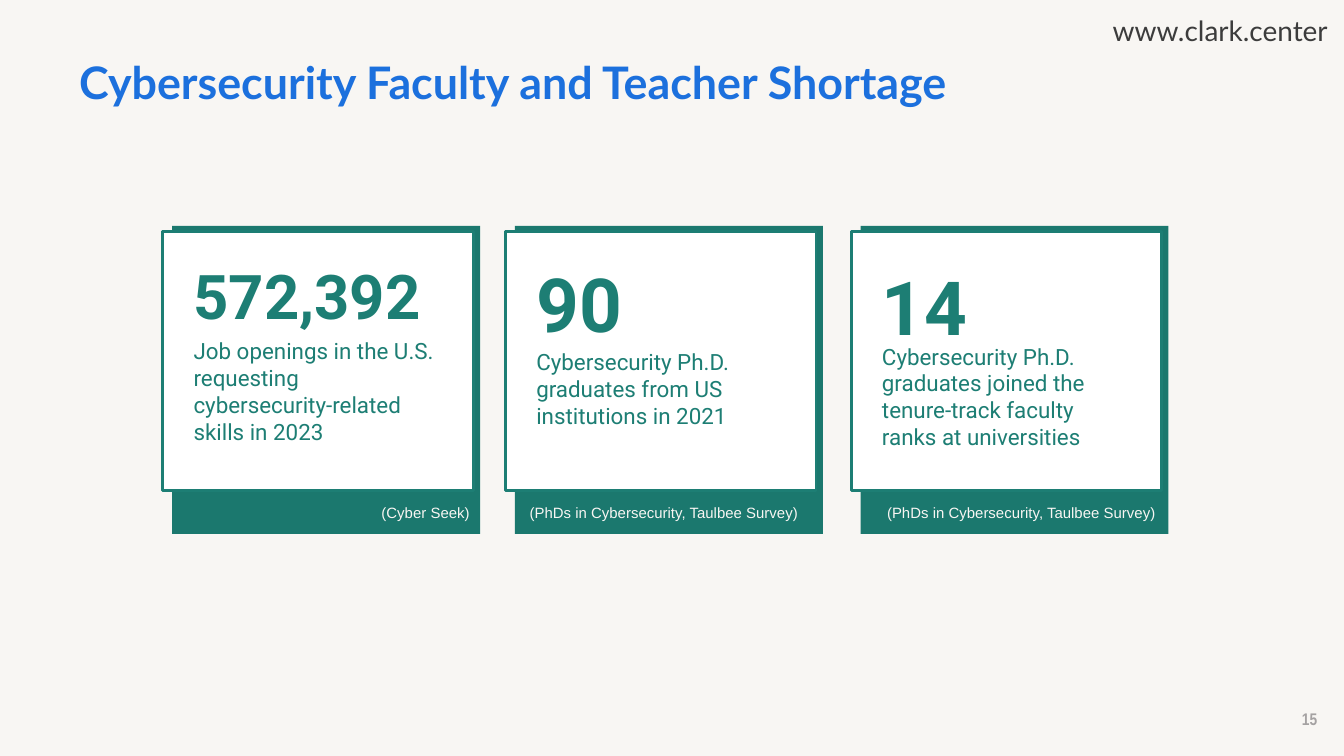
from dataclasses import dataclass

from pptx import Presentation
from pptx.dml.color import RGBColor
from pptx.enum.shapes import MSO_SHAPE as SHAPE
from pptx.enum.text import MSO_ANCHOR as ANCHOR, MSO_AUTO_SIZE as AUTO, PP_ALIGN as ALIGN
from pptx.util import Pt


@dataclass(frozen=True)
class Theme:
    paper: str = "F8F6F3"
    white: str = "FFFFFF"
    blue: str = "1C70DD"
    teal: str = "1D7E74"
    dark_teal: str = "1B786E"
    ink: str = "3C3C3C"
    gray: str = "A5A2A2"
    heading: str = "Lato"
    body: str = "Roboto"
    source: str = "Arial"
    number: str = "Arial Narrow"
    title_size: float = 24
    site_size: float = 15
    text_size: float = 12
    page_size: float = 9
    source_size: float = 8


class Deck:
    def __init__(self, theme, width, height):
        self.theme = theme
        self.prs = Presentation()
        self.prs.slide_width, self.prs.slide_height = Pt(width), Pt(height)

    def new_slide(self):
        self.slide = self.prs.slides.add_slide(self.prs.slide_layouts[5])
        fill = self.slide.background.fill
        fill.solid()
        fill.fore_color.rgb = RGBColor.from_string(self.theme.paper)

    def set_text(self, sp, text, font, size, color, bold=False, inset=(7.2, 7.2),
                 anchor=ANCHOR.TOP, **paragraph):
        """Fill a shape's text frame with one formatted paragraph."""
        tf = sp.text_frame
        dx, dy = inset
        frame = dict(word_wrap=True, auto_size=AUTO.NONE, vertical_anchor=anchor,
                     margin_left=Pt(dx), margin_right=Pt(dx),
                     margin_top=Pt(dy), margin_bottom=Pt(dy))
        p = tf.paragraphs[0]
        r = p.add_run()
        r.text = text
        r.font.color.rgb = RGBColor.from_string(color)
        run = dict(name=font, size=Pt(size), bold=bold)
        for target, values in ((tf, frame), (p, paragraph), (r.font, run)):
            for key, value in values.items():
                setattr(target, key, value)

    def title(self, box, text):
        sp = self.slide.shapes.title
        sp.left, sp.top, sp.width, sp.height = map(Pt, box)
        t = self.theme
        self.set_text(sp, text, t.heading, t.title_size, t.blue, True, (5, 3),
                      anchor=ANCHOR.MIDDLE, alignment=ALIGN.LEFT, line_spacing=0.9)

    def text(self, box, text, font, size, color, parent=None, **style):
        shapes = (parent or self.slide).shapes
        sp = shapes.add_textbox(*map(Pt, box))
        self.set_text(sp, text, font, size, color, **style)

    def rect(self, box, fill, line=None, parent=None):
        shapes = (parent or self.slide).shapes
        sp = shapes.add_shape(SHAPE.RECTANGLE, *map(Pt, box))
        sp.shadow.inherit = False
        sp.fill.solid()
        sp.fill.fore_color.rgb = RGBColor.from_string(fill)
        if line:
            sp.line.color.rgb = RGBColor.from_string(line)
            sp.line.width = Pt(1.5)
        else:
            sp.line.fill.background()

    def card(self, x, figure, size, figure_y, label, label_y):
        """A white panel over a teal square, with a figure and its label."""
        t = self.theme
        g = self.slide.shapes.add_group_shape()
        self.rect((x, 121, 165, 165), t.dark_teal, parent=g)
        self.rect((x - 5, 124, 166.4, 139), t.white, t.teal, parent=g)
        self.text((x + 4.4, label_y, 147.6, 34), label,
                  t.body, t.text_size, t.teal, parent=g)
        self.text((x + 4.4, figure_y, 147.6, 37.5), figure,
                  t.body, size, t.teal, parent=g, bold=True)


def main():
    t = Theme()
    deck = Deck(t, 720, 405)
    deck.new_slide()

    # Title and page number
    deck.title((37.4, 15.8, 484.6, 59), "Cybersecurity Faculty and Teacher Shortage")
    deck.text((589, 377.3, 121.7, 15.8), "15", t.number, t.page_size, t.gray,
              bold=True, inset=(5, 3), anchor=ANCHOR.MIDDLE, alignment=ALIGN.RIGHT)

    # Statistic cards
    for card in (
        (92.2, "572,392", 33, 131,
         "Job openings in the U.S. requesting cybersecurity-related skills in 2023", 173.5),
        (275.8, "90", 40, 131,
         "Cybersecurity Ph.D. graduates from US institutions in 2021", 179.3),
        (461, "14", 40, 132.5,
         "Cybersecurity Ph.D. graduates joined the tenure-track faculty ranks "
         "at universities", 176.4),
    ):
        deck.card(*card)

    # Sources in the card footers
    survey = "(PhDs in Cybersecurity, Taulbee Survey)"
    for x, width, source in ((199.4, 67, "(Cyber Seek)"),
                             (278.7, 165, survey), (470.2, 165, survey)):
        deck.text((x, 265, width, 21), source, t.source, t.source_size, t.paper,
                  inset=(5, 5))

    # Web address
    deck.text((589, 0, 131, 32.4), "www.clark.center", t.heading, t.site_size, t.ink)

    deck.prs.save("out.pptx")


if __name__ == "__main__":
    main()
